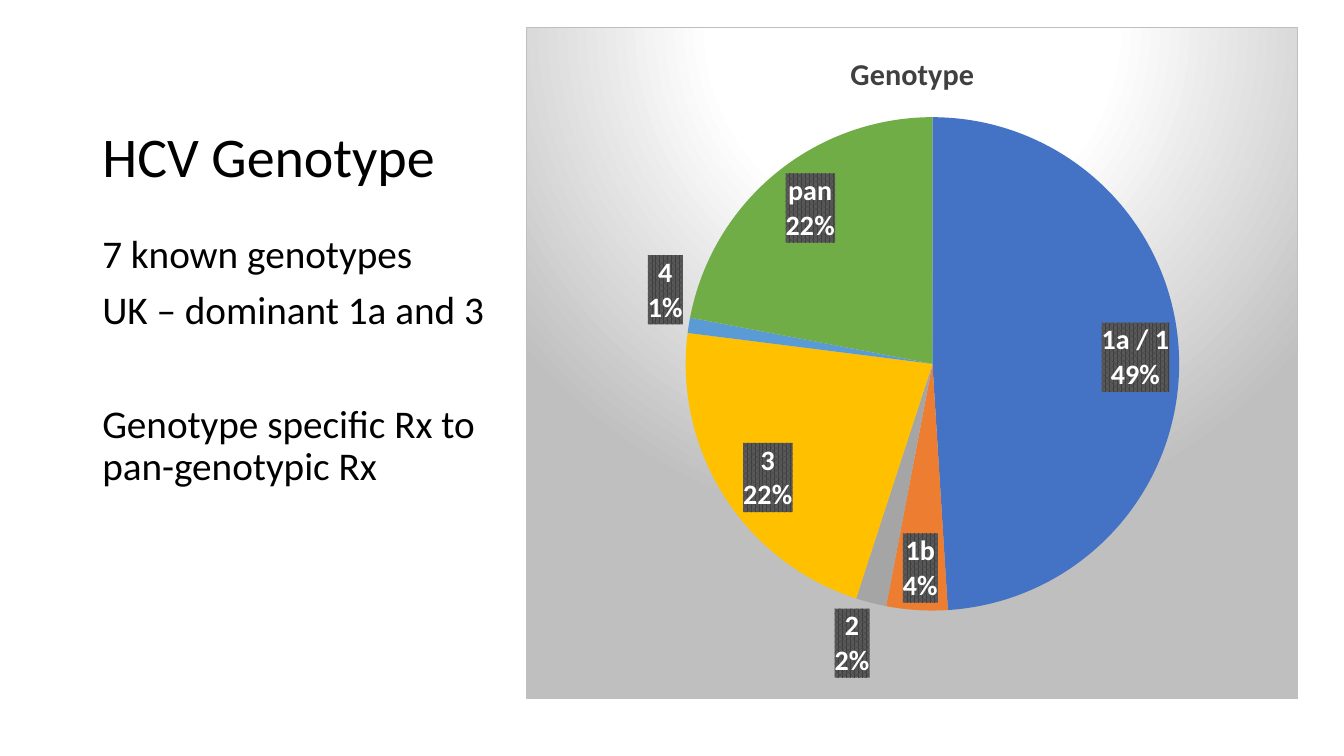
from lxml.etree import SubElement
from pptx import Presentation
from pptx.chart.data import CategoryChartData
from pptx.dml.color import RGBColor
from pptx.enum.chart import XL_CHART_TYPE, XL_LABEL_POSITION
from pptx.enum.text import MSO_ANCHOR, MSO_AUTO_SIZE, PP_ALIGN
from pptx.oxml import parse_xml
from pptx.oxml.ns import nsdecls, qn
from pptx.util import Pt

# Content
TITLE = "HCV Genotype"
POINTS = [  # text, space before
    ("7 known genotypes", 0),
    ("UK – dominant 1a and 3", 10),
    ("Genotype specific Rx to pan-genotypic Rx", 51),
]
CHART_TITLE = "Genotype"
BLACK = RGBColor(0x00, 0x00, 0x00)
WHITE = RGBColor(0xFF, 0xFF, 0xFF)
CHARCOAL = RGBColor(0x40, 0x40, 0x40)
GENOTYPES = [  # name, share, slice colour
    ("1a / 1", 49, RGBColor(0x44, 0x72, 0xC4)),
    ("1b", 4, RGBColor(0xED, 0x7D, 0x31)),
    ("2", 2, RGBColor(0xA5, 0xA5, 0xA5)),
    ("3", 22, RGBColor(0xFF, 0xC0, 0x00)),
    ("4", 1, RGBColor(0x5B, 0x9B, 0xD5)),
    ("pan", 22, RGBColor(0x70, 0xAD, 0x47)),
]
FONT = "Calibri"
LEFT, COLUMN = 66, 310
PIE_LAYOUT = {"x": 0.206, "y": 0.133, "w": 0.64, "h": 0.736}

CHART_BACK = f"""<c:spPr {nsdecls('c', 'a')}>
  <a:gradFill><a:gsLst>
    <a:gs pos="0"><a:srgbClr val="FFFFFF"/></a:gs>
    <a:gs pos="39000"><a:srgbClr val="FFFFFF"/></a:gs>
    <a:gs pos="100000"><a:srgbClr val="BFBFBF"/></a:gs>
  </a:gsLst><a:path path="circle">
    <a:fillToRect l="50000" t="-80000" r="50000" b="180000"/>
  </a:path></a:gradFill>
  <a:ln w="9525"><a:solidFill><a:srgbClr val="BFBFBF"/></a:solidFill></a:ln>
</c:spPr>"""
LABEL_BACK = f"""<c:spPr {nsdecls('c', 'a')}>
  <a:pattFill prst="pct75">
    <a:fgClr><a:srgbClr val="404040"/></a:fgClr>
    <a:bgClr><a:srgbClr val="595959"/></a:bgClr>
  </a:pattFill><a:ln><a:noFill/></a:ln>
</c:spPr>"""


def style(font, size, color, bold=False):
    font.name, font.size, font.bold = FONT, Pt(size), bold
    font.color.rgb = color


deck = Presentation()
deck.slide_width, deck.slide_height = Pt(960), Pt(540)
page = deck.slides.add_slide(deck.slide_layouts[5])

# Title
title = page.shapes.title
title.left, title.top, title.width, title.height = Pt(LEFT), Pt(13), Pt(COLUMN), Pt(126)
frame = title.text_frame
frame.text = TITLE
frame.vertical_anchor = MSO_ANCHOR.BOTTOM
frame.auto_size = MSO_AUTO_SIZE.NONE
para = frame.paragraphs[0]
para.alignment, para.line_spacing = PP_ALIGN.LEFT, 0.9
style(para.font, 40, BLACK)

# Pie chart
data = CategoryChartData()
data.categories = [name for name, share, color in GENOTYPES]
data.add_series(CHART_TITLE, [share for name, share, color in GENOTYPES])
chart = page.shapes.add_chart(
    XL_CHART_TYPE.PIE, Pt(376), Pt(19.5), Pt(551.5), Pt(480), data).chart
style(chart.font, 10, BLACK)
chart.has_legend = False
chart.has_title = True
chart.chart_title.text_frame.text = CHART_TITLE
style(chart.chart_title.text_frame.paragraphs[0].font, 21.6, CHARCOAL, True)

plot = chart.plots[0]
plot.vary_by_categories = True
series = plot.series[0]
for index, (name, share, color) in enumerate(GENOTYPES):
    fill = series.points[index].format.fill
    fill.solid()
    fill.fore_color.rgb = color

# Slice labels
labels = series.data_labels
labels.show_category_name = labels.show_percentage = True
labels.show_value = False
labels.position = XL_LABEL_POSITION.BEST_FIT
style(labels.font, 20, WHITE, True)
label_root = series._element.find(qn("c:dLbls"))
label_root.find(qn("c:txPr")).addprevious(parse_xml(LABEL_BACK))
separator = label_root.find(qn("c:showBubbleSize"))
if separator is None:
    separator = label_root.find(qn("c:showPercent"))
separator.addnext(parse_xml(f"<c:separator {nsdecls('c')}>\n</c:separator>"))

# Chart background and pie position
root = chart._chartSpace
root.find(qn("c:chart")).addnext(parse_xml(CHART_BACK))
area = root.find(qn("c:chart")).find(qn("c:plotArea"))
layout = area.find(qn("c:layout"))
if layout is None:
    layout = parse_xml(f"<c:layout {nsdecls('c')}/>")
    area.insert(0, layout)
manual = SubElement(layout, qn("c:manualLayout"))
SubElement(manual, qn("c:layoutTarget")).set("val", "inner")
for axis in "xy":
    SubElement(manual, qn(f"c:{axis}Mode")).set("val", "edge")
for key, value in PIE_LAYOUT.items():
    SubElement(manual, qn(f"c:{key}")).set("val", str(value))

# Key points
box = page.shapes.add_textbox(Pt(LEFT), Pt(164), Pt(COLUMN), Pt(300))
frame = box.text_frame
frame.word_wrap = True
for index, (text, gap) in enumerate(POINTS):
    para = frame.add_paragraph() if index else frame.paragraphs[0]
    para.text = text
    para.line_spacing, para.space_before = 0.9, Pt(gap)
    style(para.font, 28, BLACK)

deck.save("out.pptx")
